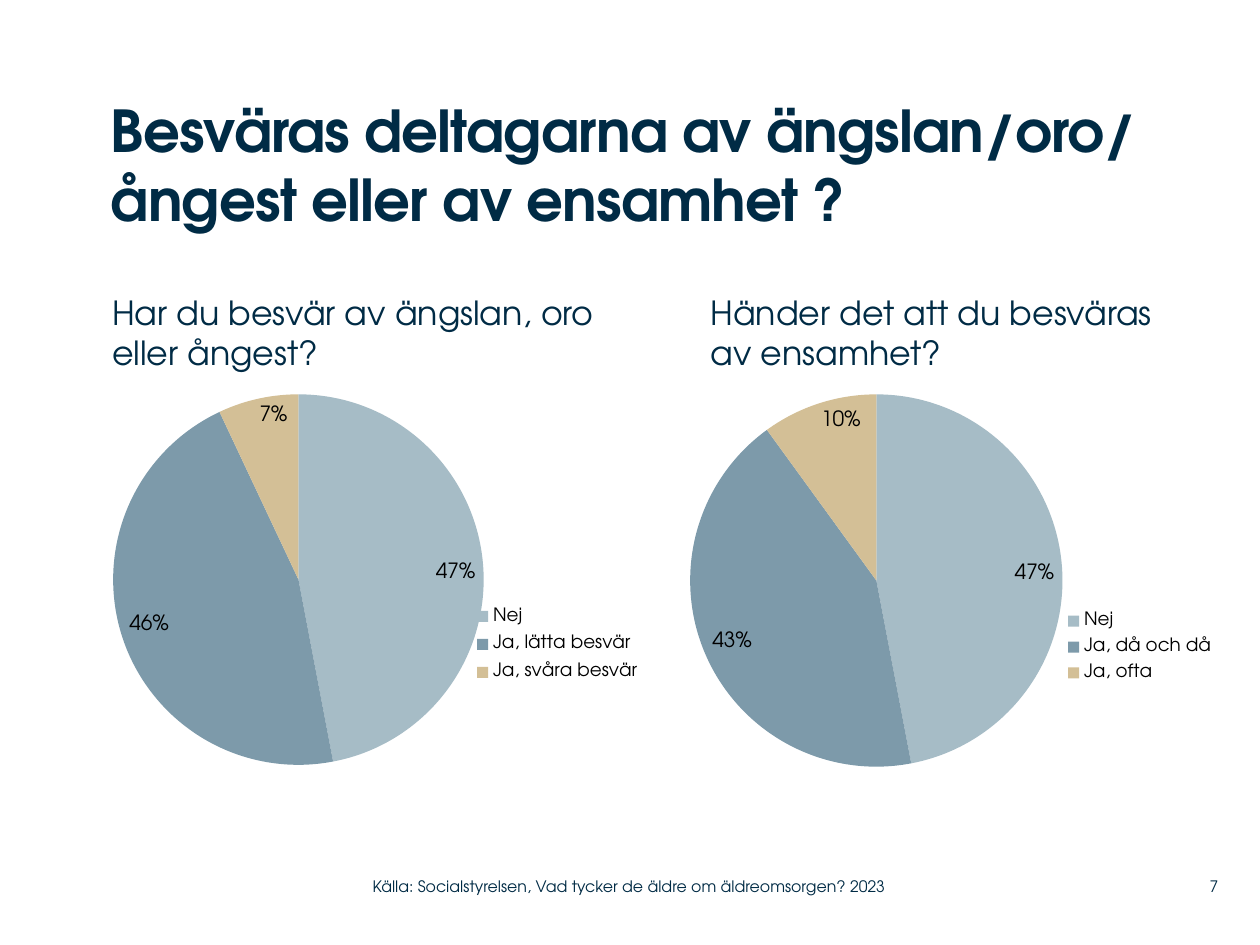
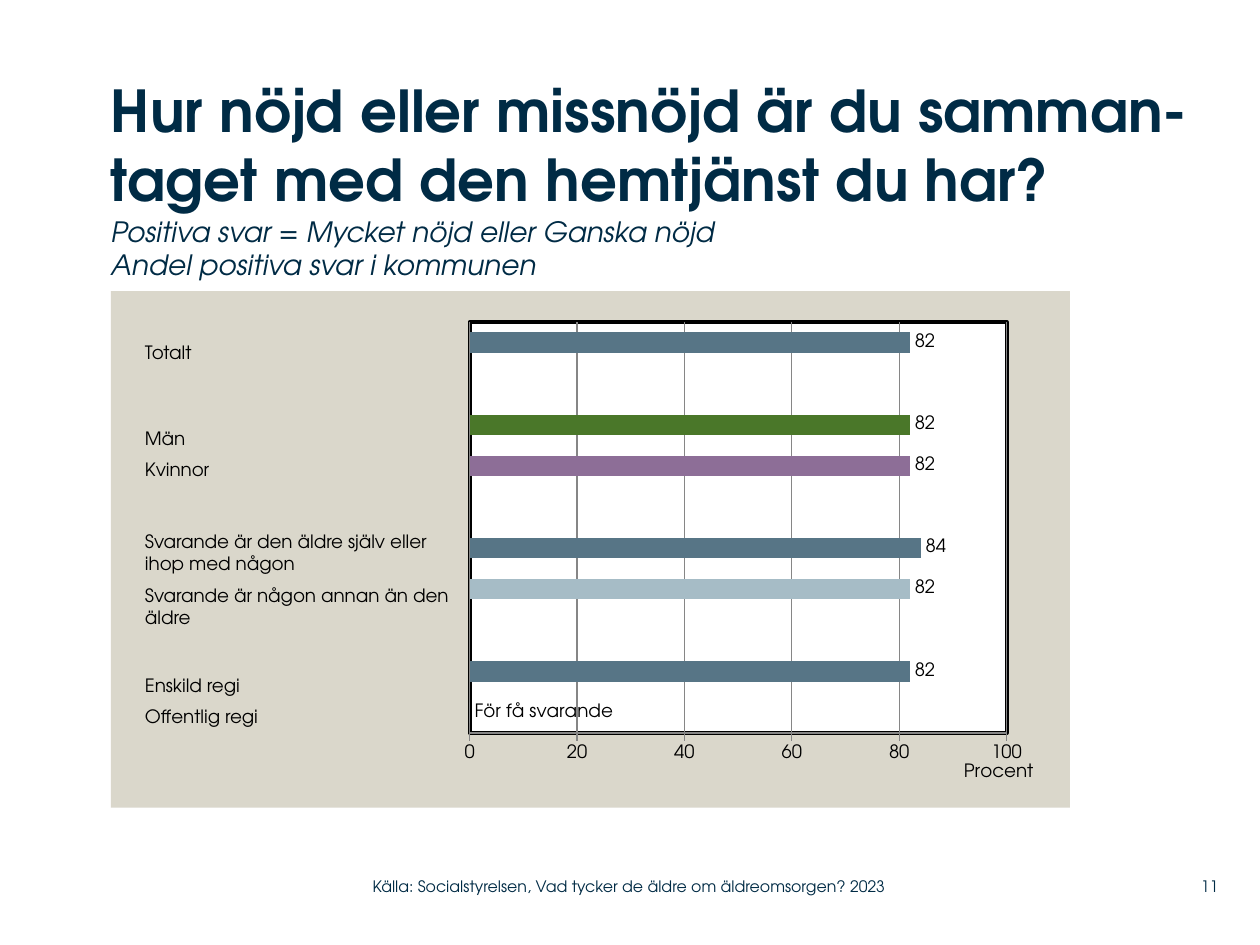
from dataclasses import dataclass

from pptx import Presentation
from pptx.chart.chart import Chart
from pptx.chart.data import CategoryChartData
from pptx.dml.color import RGBColor
from pptx.enum.chart import XL_CHART_TYPE, XL_LABEL_POSITION, XL_LEGEND_POSITION, XL_TICK_LABEL_POSITION, XL_TICK_MARK
from pptx.enum.text import MSO_ANCHOR, PP_ALIGN
from pptx.oxml import parse_xml
from pptx.oxml.ns import nsdecls, qn
from pptx.slide import Slide
from pptx.util import Pt

PIE, BAR = XL_CHART_TYPE.PIE, XL_CHART_TYPE.BAR_CLUSTERED
INSIDE_END, OUTSIDE_END = XL_LABEL_POSITION.INSIDE_END, XL_LABEL_POSITION.OUTSIDE_END
LEGEND_RIGHT = XL_LEGEND_POSITION.RIGHT
TICK_OUT, TICK_NONE = XL_TICK_MARK.OUTSIDE, XL_TICK_MARK.NONE
LABELS_LOW = XL_TICK_LABEL_POSITION.LOW
TOP, MIDDLE = MSO_ANCHOR.TOP, MSO_ANCHOR.MIDDLE
LEFT, RIGHT = PP_ALIGN.LEFT, PP_ALIGN.RIGHT


@dataclass(frozen=True)
class Theme:
    font: str = "TeX Gyre Adventor"
    navy: str = "002B45"
    black: str = "000000"
    white: str = "FFFFFF"
    sand: str = "DAD7CB"
    grid: str = "868686"
    light_blue: str = "A6BCC6"
    mid_blue: str = "7D9AAA"
    steel: str = "577586"
    beige: str = "D3BF96"
    green: str = "4A7729"
    purple: str = "8D6E97"
    title: float = 33
    question: float = 19
    subtitle: float = 16
    share: float = 12
    label: float = 10.5
    footer: float = 9


THEME = Theme()


@dataclass(frozen=True)
class Box:
    """Position and size: points on a slide, fractions inside a chart."""
    x: float
    y: float
    w: float
    h: float


@dataclass(frozen=True)
class TextStyle:
    size: float
    color: str = THEME.navy
    bold: bool = False
    italic: bool = False
    inset: bool = False
    anchor: MSO_ANCHOR = TOP
    align: PP_ALIGN = LEFT


TITLE = TextStyle(THEME.title, bold=True)
SUBTITLE = TextStyle(THEME.subtitle, italic=True)
QUESTION = TextStyle(THEME.question, inset=True)
ROW_LABEL = TextStyle(THEME.label, THEME.black, inset=True)
SOURCE = TextStyle(THEME.footer, anchor=MIDDLE)
PAGE_NUMBER = TextStyle(THEME.footer, anchor=MIDDLE, align=RIGHT)


@dataclass(frozen=True)
class PieQuestion:
    text: str
    text_box: Box
    chart_box: Box
    plot: Box
    legend: Box
    answers: dict[str, int]


@dataclass(frozen=True)
class RowLabel:
    y: float
    lines: tuple[str, ...]


PIE_QUESTIONS = (
    PieQuestion("Har du besvär av ängslan, oro eller ångest?",
                Box(57, 163.5, 293, 53), Box(28, 201, 390, 246),
                Box(0.094, 0.099, 0.543, 0.861), Box(0.62, 0.57, 0.25, 0.22),
                {"Nej": 47, "Ja, lätta besvär": 46, "Ja, svåra besvär": 7}),
    PieQuestion("Händer det att du besväras av ensamhet?",
                Box(399, 163.5, 267, 53), Box(353, 202.5, 390, 246),
                Box(0.106, 0.093, 0.546, 0.865), Box(0.65, 0.58, 0.23, 0.2),
                {"Nej": 47, "Ja, då och då": 43, "Ja, ofta": 10}),
)
PIE_COLORS = (THEME.light_blue, THEME.mid_blue, THEME.beige)

SATISFACTION = (0, 82, None, 82, 84, None, 82, 82, None, 82)
BAR_COLORS = {0: THEME.light_blue, 1: THEME.steel, 3: THEME.light_blue,
              4: THEME.steel, 6: THEME.purple, 9: THEME.steel}
ROW_LABELS = (
    RowLabel(191.5, ("Totalt",)),
    RowLabel(240.5, ("Män",)),
    RowLabel(258.5, ("Kvinnor",)),
    RowLabel(299.5, ("Svarande är den äldre själv eller", "ihop med någon")),
    RowLabel(330, ("Svarande är någon annan än den", "äldre")),
    RowLabel(381.5, ("Enskild regi",)),
    RowLabel(399.5, ("Offentlig regi",)),
)


def rgb(color: str) -> RGBColor:
    return RGBColor.from_string(color)


def set_font(font, size: float, color: str, bold: bool = False, italic: bool = False) -> None:
    font.name, font.size, font.bold, font.italic = THEME.font, Pt(size), bold, italic
    font.color.rgb = rgb(color)


def add_text(slide: Slide, box: Box, lines: tuple[str, ...], style: TextStyle,
             spacing: float = 0) -> None:
    """Add a text box with one paragraph a line; spacing is between letters."""
    tf = slide.shapes.add_textbox(Pt(box.x), Pt(box.y), Pt(box.w), Pt(box.h)).text_frame
    tf.word_wrap = True
    tf.vertical_anchor = style.anchor
    if not style.inset:
        tf.margin_left = tf.margin_top = tf.margin_right = tf.margin_bottom = 0
    for i, line in enumerate(lines):
        p = tf.add_paragraph() if i else tf.paragraphs[0]
        p.alignment = style.align
        r = p.add_run()
        r.text = line
        set_font(r.font, style.size, style.color, style.bold, style.italic)
        if spacing:
            r.font._element.set("spc", str(round(spacing * 100)))


def add_footer(slide: Slide, number: int) -> None:
    add_text(slide, Box(662.4, 496, 33.8, 21), (str(number),), PAGE_NUMBER)
    add_text(slide, Box(213, 496, 319, 21),
             ("Källa: Socialstyrelsen, Vad tycker de äldre om äldreomsorgen? 2023",), SOURCE)


def set_layout(parent, index: int, box: Box, inner: bool = False, sized: bool = True) -> None:
    """Place a chart part by hand, as fractions of the chart."""
    for old in parent.findall(qn("c:layout")):
        parent.remove(old)
    values = [("xMode", "edge"), ("yMode", "edge"), ("x", box.x), ("y", box.y)]
    if inner:
        values.insert(0, ("layoutTarget", "inner"))
    if sized:
        values += [("w", box.w), ("h", box.h)]
    items = "".join(f'<c:{tag} val="{value}"/>' for tag, value in values)
    parent.insert(index, parse_xml(
        f'<c:layout {nsdecls("c")}><c:manualLayout>{items}</c:manualLayout></c:layout>'))


def area_format(fill: str | None, line: str | None = None, width: float = 0):
    """Return the shape properties of a chart or plot area."""
    def paint(color: str | None) -> str:
        return f'<a:solidFill><a:srgbClr val="{color}"/></a:solidFill>' if color else "<a:noFill/>"
    return parse_xml(f'<c:spPr {nsdecls("c", "a")}>{paint(fill)}'
                     f'<a:ln w="{Pt(width)}">{paint(line)}</a:ln></c:spPr>')


def add_chart(slide: Slide, kind: XL_CHART_TYPE, box: Box, categories, values,
              plot: Box, fill: str | None = None) -> Chart:
    data = CategoryChartData()
    data.categories = categories
    data.add_series("Series 1", values)
    chart = slide.shapes.add_chart(kind, Pt(box.x), Pt(box.y), Pt(box.w), Pt(box.h), data).chart
    chart.has_title = chart.has_legend = False
    set_font(chart.font, THEME.label, THEME.black)
    chart_xml = chart._chartSpace.find(qn("c:chart"))
    chart_xml.addnext(area_format(fill))
    set_layout(chart_xml.find(qn("c:plotArea")), 0, plot, inner=True)
    return chart


def color_point(series, index: int, color: str) -> None:
    fill = series.points[index].format.fill
    fill.solid()
    fill.fore_color.rgb = rgb(color)


def add_pie(slide: Slide, question: PieQuestion) -> None:
    chart = add_chart(slide, PIE, question.chart_box, question.answers.keys(),
                      question.answers.values(), question.plot)
    chart.has_legend = True
    legend = chart.legend
    legend.position = LEGEND_RIGHT
    legend.include_in_layout = False
    set_font(legend.font, THEME.label, THEME.black)
    set_layout(legend._element, 1, question.legend)
    pie = chart.plots[0]
    for i, color in enumerate(PIE_COLORS):
        color_point(pie.series[0], i, color)
    pie.has_data_labels = True
    labels = pie.data_labels
    labels.show_percentage, labels.show_value = True, False
    labels.number_format, labels.number_format_is_linked = "0%", False
    labels.position = INSIDE_END
    set_font(labels.font, THEME.share, THEME.black)


def style_percent_axis(axis) -> None:
    axis.minimum_scale, axis.maximum_scale, axis.major_unit = 0, 100, 20
    axis.major_tick_mark, axis.minor_tick_mark = TICK_OUT, TICK_NONE
    axis.tick_label_position = LABELS_LOW
    axis.has_major_gridlines = True
    set_font(axis.tick_labels.font, THEME.label, THEME.black)
    for line in (axis.format.line, axis.major_gridlines.format.line):
        line.color.rgb = rgb(THEME.grid)
        line.width = Pt(0.75)
    r = axis.axis_title.text_frame.paragraphs[0].add_run()
    r.text = "Procent"
    set_font(r.font, THEME.label, THEME.black)
    set_layout(axis.axis_title._element, 1, Box(0.886, 0.905, 0, 0), sized=False)


def add_satisfaction_chart(slide: Slide) -> None:
    categories = [str(i) for i in range(1, len(SATISFACTION) + 1)]
    chart = add_chart(slide, BAR, Box(63.4, 166.3, 548, 295.2), categories, SATISFACTION,
                      Box(0.374, 0.06, 0.56, 0.796), THEME.sand)
    chart._chartSpace.find(".//" + qn("c:plotArea")).append(
        area_format(THEME.white, THEME.black, 2.25))
    chart.category_axis.visible = False
    style_percent_axis(chart.value_axis)

    bars = chart.plots[0]
    bars.gap_width, bars.overlap, bars.vary_by_categories = 100, -25, False
    series = bars.series[0]
    series.invert_if_negative = False
    series.format.fill.solid()
    series.format.fill.fore_color.rgb = rgb(THEME.green)
    for i, color in BAR_COLORS.items():
        color_point(series, i, color)
    labels = series.data_labels
    labels.show_value = True
    labels.position = OUTSIDE_END
    set_font(labels.font, THEME.label, THEME.black)
    too_few = series.points[0].data_label
    r = too_few.text_frame.paragraphs[0].add_run()
    r.text = "För få svarande"
    set_font(r.font, THEME.label, THEME.black)
    too_few.position = OUTSIDE_END


def build_distress_slide(slide: Slide) -> None:
    add_text(slide, Box(63.4, 54, 595.4, 102),
             ("Besväras deltagarna av ängslan/oro/ ångest eller av ensamhet ?",), TITLE, -0.5)
    for question in PIE_QUESTIONS:
        add_text(slide, question.text_box, (question.text,), QUESTION)
        add_pie(slide, question)
    add_footer(slide, 7)


def build_satisfaction_slide(slide: Slide) -> None:
    add_text(slide, Box(63.4, 42.5, 620, 77),
             ("Hur nöjd eller missnöjd är du samman- taget med den hemtjänst du har?",), TITLE)
    add_text(slide, Box(63.4, 122.4, 548, 44),
             ("Positiva svar = Mycket nöjd eller Ganska nöjd", "Andel positiva svar i kommunen"),
             SUBTITLE)
    add_satisfaction_chart(slide)
    for label in ROW_LABELS:
        add_text(slide, Box(75.8, label.y, 200, 20 * len(label.lines)), label.lines, ROW_LABEL)
    add_footer(slide, 11)


def main() -> None:
    prs = Presentation()
    prs.slide_width, prs.slide_height = Pt(720), Pt(540)
    blank = prs.slide_layouts[6]
    for build in (build_distress_slide, build_satisfaction_slide):
        build(prs.slides.add_slide(blank))
    prs.save("out.pptx")


if __name__ == "__main__":
    main()
